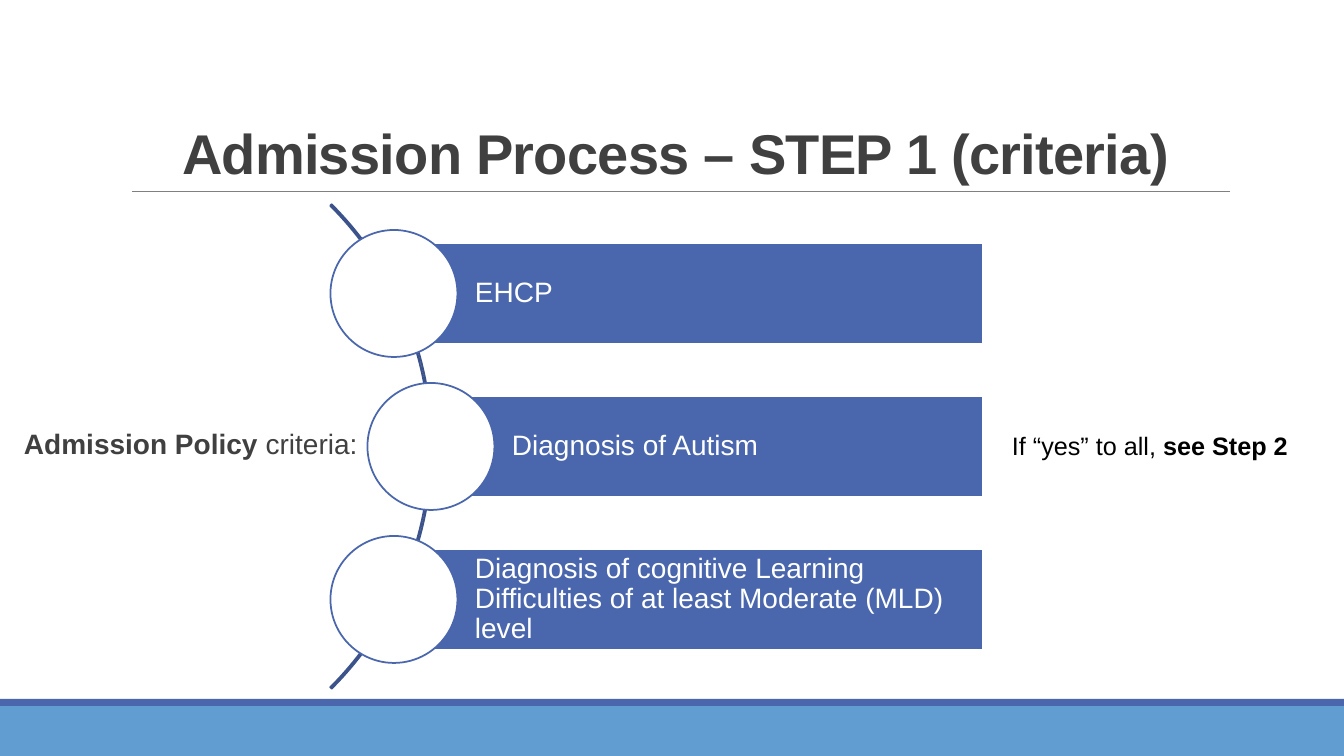
import dataclasses

import lxml.etree
import pptx
import pptx.dml.color
import pptx.enum.shapes
import pptx.enum.text
import pptx.oxml.ns
import pptx.util

SHAPE = pptx.enum.shapes.MSO_SHAPE
ANCHOR = pptx.enum.text.MSO_ANCHOR
ALIGN = pptx.enum.text.PP_ALIGN
EMU_PER_PX = 12192000 / 1344
SLIDE_W, SLIDE_H = 1344, 756


@dataclasses.dataclass(frozen=True)
class Theme:
    font: str = "Arial"
    accent: str = "4A66AC"
    footer: str = "629DD1"
    arc: str = "3B528A"
    rule: str = "808080"
    dark: str = "404040"
    black: str = "000000"
    white: str = "FFFFFF"
    title_size: int = 40
    body_size: int = 20
    note_size: int = 18
    outline: float = 1.25
    hairline: float = 0.5


THEME = Theme()


def px(n):
    return pptx.util.Emu(round(n * EMU_PER_PX))


def rgb(value):
    return pptx.dml.color.RGBColor.from_string(value)


def add_shape(s, kind, box, fill=None, line=None):
    sp = s.shapes.add_shape(kind, *map(px, box))
    sp.shadow.inherit = False
    if fill:
        sp.fill.solid()
        sp.fill.fore_color.rgb = rgb(fill)
    else:
        sp.fill.background()
    if line:
        sp.line.color.rgb = rgb(line)
        sp.line.width = pptx.util.Pt(THEME.outline)
    else:
        sp.line.fill.background()
    return sp


def set_text(sp, runs, size, color, spacing=1.0, align=ALIGN.LEFT,
             anchor=ANCHOR.TOP, wrap=True):
    """Fill one paragraph with (text, bold) runs."""
    tf = sp.text_frame
    tf.word_wrap = wrap
    tf.auto_size = pptx.enum.text.MSO_AUTO_SIZE.NONE
    tf.vertical_anchor = anchor
    p = tf.paragraphs[0]
    p.alignment = align
    p.line_spacing = spacing
    p.font.name = THEME.font
    p.font.size = pptx.util.Pt(size)
    p.font.color.rgb = rgb(color)
    for text, bold in runs:
        r = p.add_run()
        r.text = text
        r.font.bold = bold
    return tf


def set_margins(tf, *margins):
    tf.margin_left, tf.margin_top, tf.margin_right, tf.margin_bottom = map(px, margins)


def add_footer(s, top, stripe_h):
    add_shape(s, SHAPE.RECTANGLE, (0, top + stripe_h, SLIDE_W, SLIDE_H - top - stripe_h),
              THEME.footer)
    add_shape(s, SHAPE.RECTANGLE, (0, top, SLIDE_W, stripe_h), THEME.accent)


def add_title(s, text, box, rule_inset):
    """Place the title with a thin rule along the bottom of its box."""
    left, top, width, height = box
    sp = s.shapes.title
    sp.left, sp.top, sp.width, sp.height = map(px, box)
    tf = set_text(sp, [(text, True)], THEME.title_size, THEME.dark, 0.85,
                  ALIGN.CENTER, ANCHOR.BOTTOM)
    tf.paragraphs[0].runs[0]._r.get_or_add_rPr().set("spc", "-50")

    bottom = px(top + height)
    rule = s.shapes.add_connector(pptx.enum.shapes.MSO_CONNECTOR.STRAIGHT,
                                  px(left + rule_inset), bottom, px(left + width), bottom)
    rule.line.color.rgb = rgb(THEME.rule)
    rule.line.width = pptx.util.Pt(THEME.hairline)
    lxml.etree.SubElement(rule._element.spPr, pptx.oxml.ns.qn("a:effectLst"))


def add_criteria(s, criteria, box):
    """Stack bars in the box, each led by a circle that sits on a shared arc."""
    left, top, width, bar_h = box
    pitch, bulge, circle, arc_d = 153, 37, 127, 685
    middle = (len(criteria) - 1) / 2
    arc_top = top + bar_h / 2 + middle * pitch - arc_d / 2
    arc = add_shape(s, SHAPE.BLOCK_ARC, (left - 647, arc_top, arc_d, arc_d), line=THEME.arc)
    for i, value in enumerate((189, 27, 0.003)):
        arc.adjustments[i] = value

    for i, text in enumerate(criteria):
        shift = bulge if i == middle else 0
        x, y = left + shift, top + i * pitch
        bar = add_shape(s, SHAPE.RECTANGLE, (x, y, width - shift, bar_h),
                        THEME.accent, THEME.white)
        tf = set_text(bar, [(text, False)], THEME.body_size, THEME.white, 0.9,
                      anchor=ANCHOR.MIDDLE)
        set_margins(tf, 81, 6, 6, 6)
        add_shape(s, SHAPE.OVAL, (x - circle / 2, y + (bar_h - circle) / 2, circle, circle),
                  THEME.white, THEME.accent)


def add_policy_label(s, box):
    sp = s.shapes.add_textbox(*map(px, box))
    tf = set_text(sp, [("Admission Policy ", True), ("criteria:", False)],
                  THEME.body_size, THEME.dark, 0.9)
    set_margins(tf, 10, 5, 0, 5)


def add_next_step(s, box):
    sp = s.shapes.add_textbox(*map(px, box))
    set_text(sp, [("If “yes” to all, ", False), ("see Step 2", True)],
             THEME.note_size, THEME.black, wrap=False)


def main():
    prs = pptx.Presentation()
    prs.slide_width, prs.slide_height = px(SLIDE_W), px(SLIDE_H)
    s = prs.slides.add_slide(prs.slide_layouts.get_by_name("Title Only"))
    add_footer(s, 699, 7)
    add_title(s, "Admission Process – STEP 1 (criteria)", (121, 31, 1109, 160), 11)
    add_criteria(s, [
        "EHCP",
        "Diagnosis of Autism",
        "Diagnosis of cognitive Learning Difficulties of at least Moderate (MLD) level",
    ], (394, 243, 589, 101))
    add_policy_label(s, (14, 425, 404, 55))
    add_next_step(s, (1002, 425, 298, 40))
    prs.save("out.pptx")


if __name__ == "__main__":
    main()
